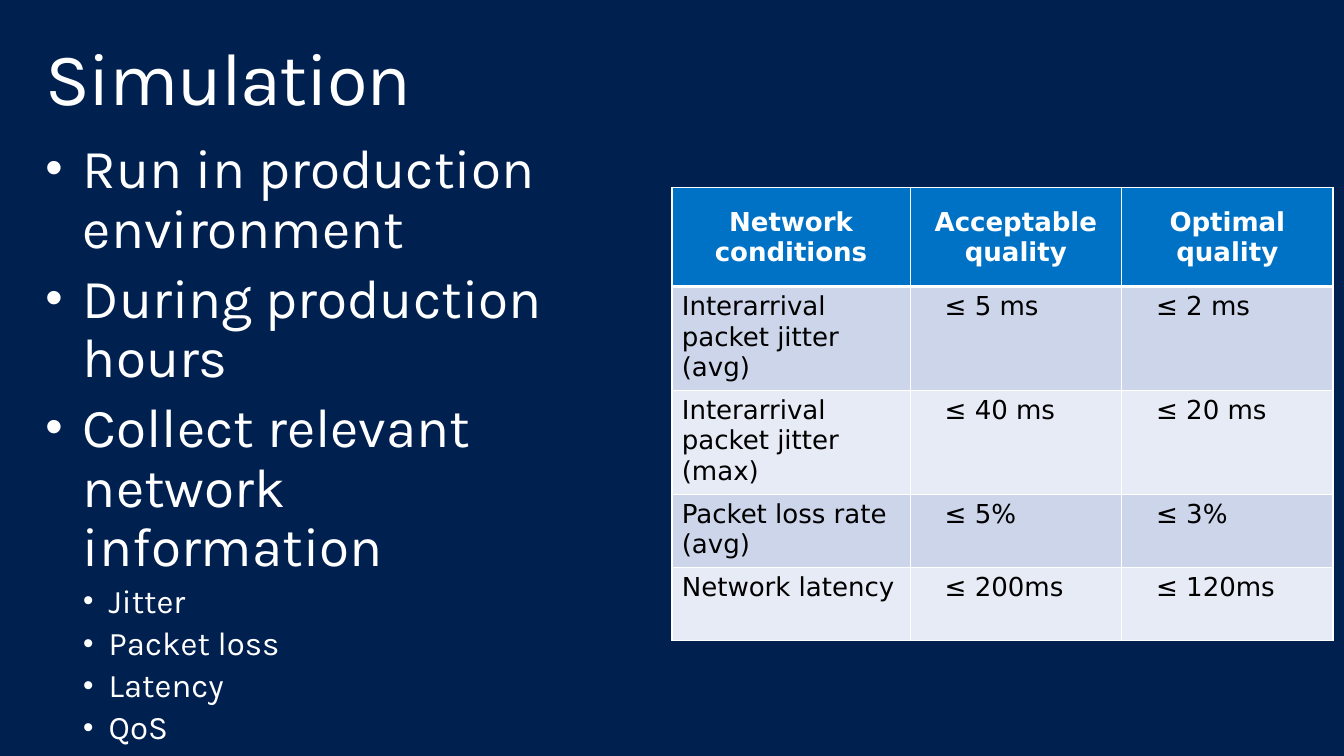
from dataclasses import dataclass

from lxml.etree import SubElement
from pptx import Presentation
from pptx.dml.color import RGBColor
from pptx.enum.text import MSO_ANCHOR, PP_ALIGN
from pptx.oxml import parse_xml
from pptx.oxml.ns import nsdecls, qn
from pptx.util import Inches, Pt

HUES = {
    "navy": "002050",
    "blue": "0072C6",
    "white": "FFFFFF",
    "black": "000000",
    "dark": "CCD5EA",
    "light": "E7EBF5",
}
SLIDE = (13.6, 7.65)
WIDTHS = (2.41, 2.14, 2.14)


@dataclass
class Point:
    text: str
    size: float = 40
    left: float = 0.38
    hang: float = 0.38
    level: int = 0


@dataclass
class Row:
    cells: tuple
    height: float
    fill: str
    head: bool = False
    top: float = 1
    base: float = 1


def minor(text):
    return Point(text, 24, 0.64, 0.26, 1)


POINTS = [
    Point("Run in production environment"),
    Point("During production hours"),
    Point("Collect relevant network information"),
    minor("Jitter"),
    minor("Packet loss"),
    minor("Latency"),
    minor("QoS"),
]
ROWS = [
    Row(("Network conditions", "Acceptable quality", "Optimal quality"), 1, "blue", head=True, base=3),
    Row(("Interarrival packet jitter (avg)", "≤ 5 ms", "≤ 2 ms"), 1.05, "dark", top=3),
    Row(("Interarrival packet jitter (max)", "≤ 40 ms", "≤ 20 ms"), 1.05, "light"),
    Row(("Packet loss rate (avg)", "≤ 5%", "≤ 3%"), 0.74, "dark"),
    Row(("Network latency", "≤ 200ms", "≤ 120ms"), 0.74, "light"),
]


def color(name):
    return RGBColor.from_string(HUES[name])


def write(para, text, *, size, font="Karla", hue="white", bold=False,
          align=None, lines=None, track=None, left=0, hang=0):
    para.alignment = align
    para.line_spacing = lines
    props = para._p.get_or_add_pPr()
    props.set("marL", str(Inches(left)))
    props.set("indent", str(-Inches(hang)))
    run = para.add_run()
    run.text = text
    run.font.name = font
    run.font.size = Pt(size)
    run.font.bold = bold
    run.font.color.rgb = color(hue)
    if track is not None:
        run._r.get_or_add_rPr().set("spc", str(track))


def bullet(para):
    props = para._p.get_or_add_pPr()
    gap = SubElement(props, qn("a:spcBef"))
    SubElement(gap, qn("a:spcPct"), val="20000")
    SubElement(props, qn("a:buSzPct"), val="90000")
    SubElement(props, qn("a:buFont"), typeface="Arial")
    SubElement(props, qn("a:buChar"), char="•")


def add_box(slide, left, top, width, height):
    box = slide.shapes.add_textbox(Inches(left), Inches(top), Inches(width), Inches(height))
    frame = box.text_frame
    frame.word_wrap = True
    frame.margin_left = frame.margin_right = Inches(0.16)
    frame.margin_top = frame.margin_bottom = Inches(0.1)
    return frame


def add_list(slide, points: list[Point]):
    frame = add_box(slide, 0.3, 1.33, 5.85, 5.88)
    for num, point in enumerate(points):
        para = frame.add_paragraph() if num else frame.paragraphs[0]
        para.level = point.level
        write(para, point.text, size=point.size, lines=0.9, left=point.left, hang=point.hang)
        bullet(para)


def border(cell, row: Row):
    props = cell._tc.get_or_add_tcPr()
    sides = {"L": 1, "R": 1, "T": row.top, "B": row.base}
    for spot, (side, width) in enumerate(sides.items()):
        props.insert(spot, parse_xml(
            f'<a:ln{side} {nsdecls("a")} w="{Pt(width)}"><a:solidFill>'
            f'<a:srgbClr val="{HUES["white"]}"/></a:solidFill></a:ln{side}>'))


def add_grid(slide, rows: list[Row]):
    tall = sum(row.height for row in rows)
    table = slide.shapes.add_table(
        len(rows), len(WIDTHS), Inches(6.8), Inches(1.9), Inches(sum(WIDTHS)), Inches(tall)).table
    for col, width in zip(table.columns, WIDTHS):
        col.width = Inches(width)
    for line, row in zip(table.rows, rows):
        line.height = Inches(row.height)
        for num, (cell, text) in enumerate(zip(line.cells, row.cells)):
            cell.fill.solid()
            cell.fill.fore_color.rgb = color(row.fill)
            cell.vertical_anchor = MSO_ANCHOR.MIDDLE if row.head else MSO_ANCHOR.TOP
            write(cell.text_frame.paragraphs[0], text, size=19, font="DejaVu Sans",
                  hue="white" if row.head else "black", bold=row.head,
                  align=PP_ALIGN.CENTER if row.head else None,
                  left=0.25 if num and not row.head else 0)
            border(cell, row)


def main():
    deck = Presentation()
    deck.slide_width, deck.slide_height = map(Inches, SLIDE)
    slide = deck.slides.add_slide(deck.slide_layouts[6])
    slide.background.fill.solid()
    slide.background.fill.fore_color.rgb = color("navy")
    title = add_box(slide, 0.3, 0.32, 13, 1)
    write(title.paragraphs[0], "Simulation", size=54, lines=0.9, track=-100)
    add_list(slide, POINTS)
    add_grid(slide, ROWS)
    deck.save("out.pptx")


if __name__ == "__main__":
    main()
